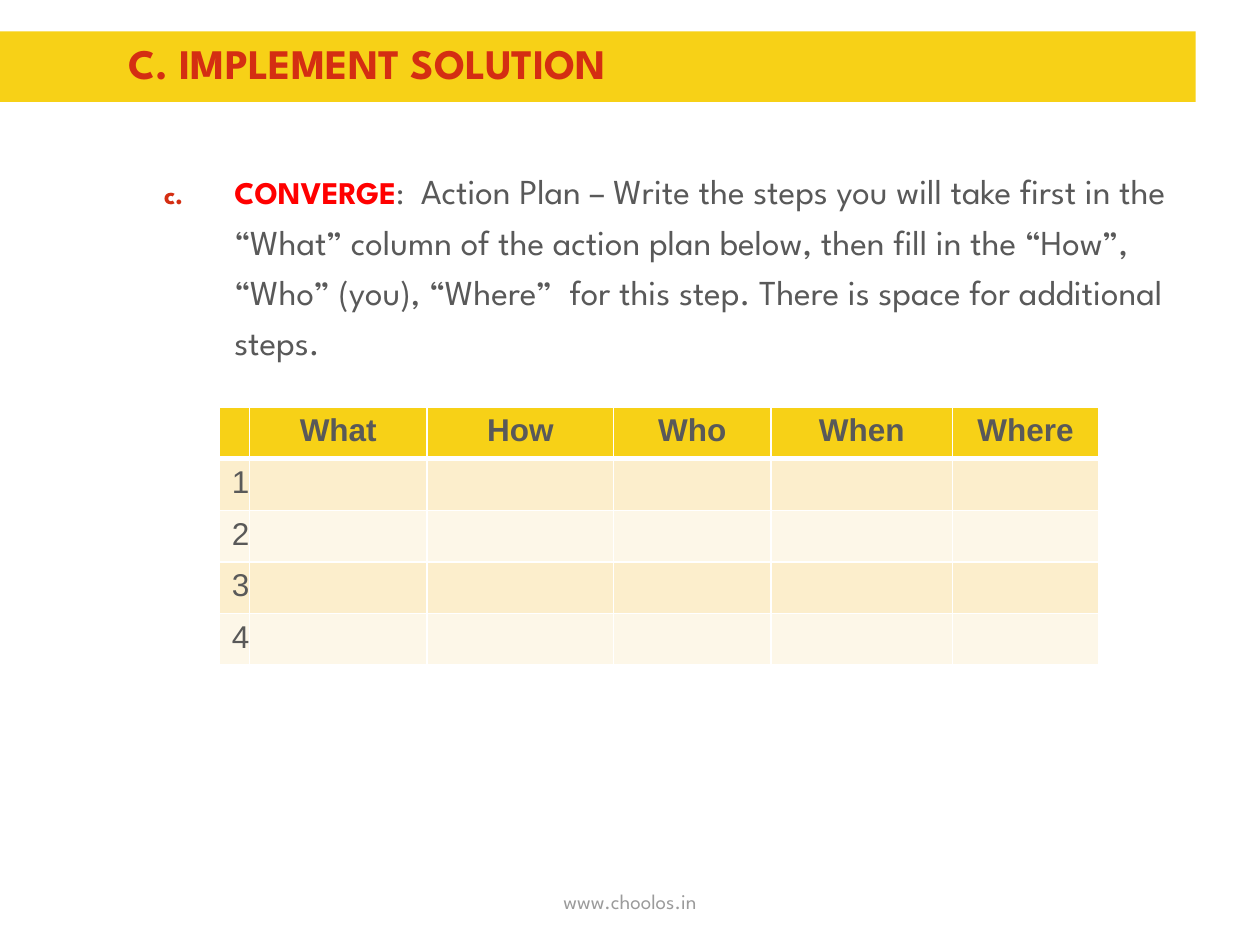
from lxml import etree
from pptx import Presentation
from pptx.dml.color import RGBColor
from pptx.enum.shapes import MSO_SHAPE
from pptx.enum.text import MSO_ANCHOR, PP_ALIGN
from pptx.oxml.ns import qn
from pptx.util import Inches, Pt

FONT = "League Spartan"
YELLOW, RED, GREY, WHITE = "F7D117", "D42E12", "595959", "FFFFFF"
BANDS = ("FCEECC", "FDF7E8")
HEADERS = ("", "What", "How", "Who", "When", "Where")
COL_WIDTHS = (0.23, 1.41, 1.48, 1.25, 1.44, 1.16)
ROW_HEIGHT = 0.41
STEPS = 4


def color(value):
    return RGBColor.from_string(value)


def format_run(r, size, value, bold=False, font=FONT):
    r.font.size = Pt(size)
    r.font.name = font
    r.font.bold = bold
    r.font.color.rgb = color(value)


def add_bar(s, left, top, width, height, fill):
    sp = s.shapes.add_shape(MSO_SHAPE.RECTANGLE, Inches(left), Inches(top),
                            Inches(width), Inches(height))
    sp.shadow.inherit = False
    sp.fill.solid()
    sp.fill.fore_color.rgb = color(fill)
    sp.line.fill.background()


def add_text(s, left, top, width, height, runs, margin=0):
    sp = s.shapes.add_textbox(Inches(left), Inches(top), Inches(width), Inches(height))
    tf = sp.text_frame
    tf.word_wrap = True
    tf.margin_left = tf.margin_right = Inches(margin)
    tf.margin_top = tf.margin_bottom = Inches(margin / 2)
    p = tf.paragraphs[0]
    for text, size, value, bold in runs:
        r = p.add_run()
        r.text = text
        format_run(r, size, value, bold)
    return tf


def number_paragraph(p, start, value):
    pPr = p._p.get_or_add_pPr()
    pPr.set("marL", str(Inches(1)))
    pPr.set("indent", str(Inches(-0.56)))
    buClr = etree.SubElement(pPr, qn("a:buClr"))
    etree.SubElement(buClr, qn("a:srgbClr"), val=value)
    etree.SubElement(pPr, qn("a:buSzPct"), val="85000")
    etree.SubElement(pPr, qn("a:buFont"), typeface=FONT)
    etree.SubElement(pPr, qn("a:buAutoNum"), type="alphaLcPeriod", startAt=str(start))


def border_cell(cell, widths):
    tcPr = cell._tc.get_or_add_tcPr()
    for i, (side, width) in enumerate(widths.items()):
        ln = etree.Element(qn(f"a:ln{side}"), w=str(Pt(width)))
        fill = etree.SubElement(ln, qn("a:solidFill"))
        etree.SubElement(fill, qn("a:srgbClr"), val=WHITE)
        tcPr.insert(i, ln)


def format_cell(cell, text, fill, header, top, bottom):
    cell.fill.solid()
    cell.fill.fore_color.rgb = color(fill)
    border_cell(cell, {"L": 1, "R": 1, "T": top, "B": bottom})
    if text:
        cell.text_frame.text = text
        p = cell.text_frame.paragraphs[0]
        p.alignment = PP_ALIGN.CENTER if header else PP_ALIGN.LEFT
        format_run(p.runs[0], 18, GREY, header, "Arial")


def add_plan_table(s, left, top):
    rows = [HEADERS] + [(str(n),) + ("",) * (len(HEADERS) - 1) for n in range(1, STEPS + 1)]
    table = s.shapes.add_table(len(rows), len(HEADERS), Inches(left), Inches(top),
                               Inches(sum(COL_WIDTHS)),
                               Inches(ROW_HEIGHT * len(rows))).table
    for column, width in zip(table.columns, COL_WIDTHS):
        column.width = Inches(width)
    for i, values in enumerate(rows):
        table.rows[i].height = Inches(ROW_HEIGHT)
        header = i == 0
        fill = YELLOW if header else BANDS[(i - 1) % 2]
        for j, text in enumerate(values):
            format_cell(table.cell(i, j), text, fill, header,
                        top=3 if i == 1 else 1, bottom=3 if header else 1)


def main():
    prs = Presentation()
    prs.slide_width, prs.slide_height = Inches(10), Inches(7.5)
    s = prs.slides.add_slide(prs.slide_layouts[6])

    add_bar(s, 0, 0.25, 9.49, 0.56, YELLOW)
    add_text(s, 1.02, 0.3, 8.48, 1.25, [("C. IMPLEMENT SOLUTION", 24, RED, True)])

    body = add_text(s, 0.86, 1.28, 8.48, 2.23, [
        ("CONVERGE", 18, "FF0000", True),
        (": ", 18, GREY, False),
        (" Action Plan – Write the steps you will take first in the “What” column of "
         "the action plan below, then fill in the “How”, “Who” (you), “Where”  for this "
         "step. There is space for additional steps.", 20, GREY, False),
    ])
    p = body.paragraphs[0]
    p.line_spacing = 1.2
    p.space_after = Pt(6)
    number_paragraph(p, 3, RED)

    add_plan_table(s, 1.74, 3.23)

    footer = add_text(s, 3.31, 6.95, 3.38, 0.4,
                      [("www.choolos.in", 12, "9B9B9B", False)], margin=0.1)
    footer.vertical_anchor = MSO_ANCHOR.MIDDLE
    footer.paragraphs[0].alignment = PP_ALIGN.CENTER

    prs.save("out.pptx")


if __name__ == "__main__":
    main()
